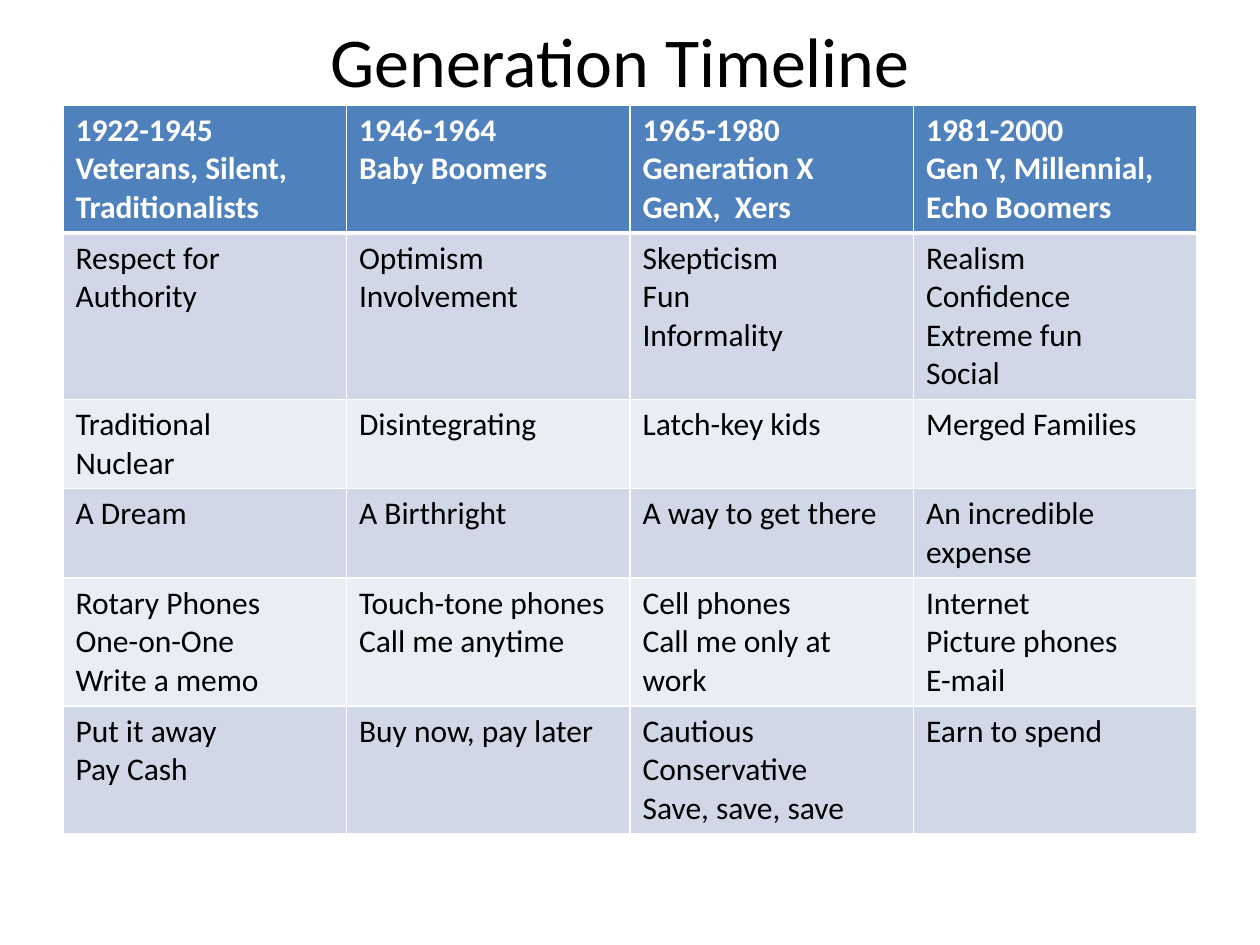
from lxml import etree
from pptx import Presentation
from pptx.dml.color import RGBColor
from pptx.enum.text import MSO_ANCHOR, PP_ALIGN
from pptx.oxml.ns import qn
from pptx.util import Cm, Pt

CENTER = PP_ALIGN.CENTER
MIDDLE = MSO_ANCHOR.MIDDLE

FONT = "Calibri"
BLACK, WHITE = "000000", "FFFFFF"
HEADER_FILL = "4F81BD"
BAND_FILLS = ("D0D8E8", "E9EDF4")
COLUMN_WIDTH = 5.715
ROW_HEIGHTS = (2.58, 3.35, 1.8, 1.8, 2.58, 2.58)

GENERATIONS = [
    ["1922-1945\nVeterans, Silent,\nTraditionalists", "1946-1964\nBaby Boomers",
     "1965-1980\nGeneration X\nGenX,  Xers", "1981-2000\nGen Y, Millennial,\nEcho Boomers"],
    ["Respect for Authority", "Optimism\nInvolvement", "Skepticism\nFun\nInformality",
     "Realism\nConfidence\nExtreme fun\nSocial"],
    ["Traditional\nNuclear", "Disintegrating", "Latch-key kids", "Merged Families"],
    ["A Dream", "A Birthright", "A way to get there", "An incredible expense"],
    ["Rotary Phones\nOne-on-One\nWrite a memo", "Touch-tone phones\nCall me anytime",
     "Cell phones\nCall me only at work", "Internet\nPicture phones\nE-mail"],
    ["Put it away\nPay Cash", "Buy now, pay later",
     "Cautious\nConservative\nSave, save, save", "Earn to spend"],
]


def rgb(color):
    return RGBColor.from_string(color)


def format_text(text_frame, size, color, bold=False):
    for paragraph in text_frame.paragraphs:
        for run in paragraph.runs:
            run.font.name = FONT
            run.font.size = Pt(size)
            run.font.bold = bold
            run.font.color.rgb = rgb(color)


def add_title(slide, text):
    box = slide.shapes.add_textbox(Cm(1.07), Cm(0.2), Cm(22.86), Cm(1.98))
    text_frame = box.text_frame
    text_frame.word_wrap = True
    text_frame.vertical_anchor = MIDDLE
    text_frame.text = text
    text_frame.paragraphs[0].alignment = CENTER
    format_text(text_frame, 40, BLACK)


def set_borders(cell, top, bottom):
    """Draw white cell borders; top and bottom are widths in points."""
    properties = cell._tc.get_or_add_tcPr()
    for side, width in (("L", 1), ("R", 1), ("T", top), ("B", bottom)):
        line = etree.SubElement(properties, qn(f"a:ln{side}"), w=str(Pt(width)))
        fill = etree.SubElement(line, qn("a:solidFill"))
        etree.SubElement(fill, qn("a:srgbClr"), val=WHITE)


def format_cell(cell, row_index):
    is_header = row_index == 0
    set_borders(cell, top=3 if row_index == 1 else 1, bottom=3 if is_header else 1)
    fill = HEADER_FILL if is_header else BAND_FILLS[(row_index - 1) % 2]
    cell.fill.solid()
    cell.fill.fore_color.rgb = rgb(fill)
    format_text(cell.text_frame, 18, WHITE if is_header else BLACK, is_header)


def add_timeline(slide, rows):
    column_count = len(rows[0])
    frame = slide.shapes.add_table(
        len(rows), column_count, Cm(1.27), Cm(2.12),
        Cm(COLUMN_WIDTH * column_count), Cm(sum(ROW_HEIGHTS)))
    table = frame.table
    for column in table.columns:
        column.width = Cm(COLUMN_WIDTH)
    for row_index, texts in enumerate(rows):
        table.rows[row_index].height = Cm(ROW_HEIGHTS[row_index])
        for column_index, text in enumerate(texts):
            cell = table.cell(row_index, column_index)
            cell.text_frame.text = text
            format_cell(cell, row_index)


def main():
    presentation = Presentation()
    presentation.slide_width = Cm(25.4)
    presentation.slide_height = Cm(19.05)
    slide = presentation.slides.add_slide(presentation.slide_layouts[6])
    add_title(slide, "Generation Timeline")
    add_timeline(slide, GENERATIONS)
    presentation.save("out.pptx")


if __name__ == "__main__":
    main()
